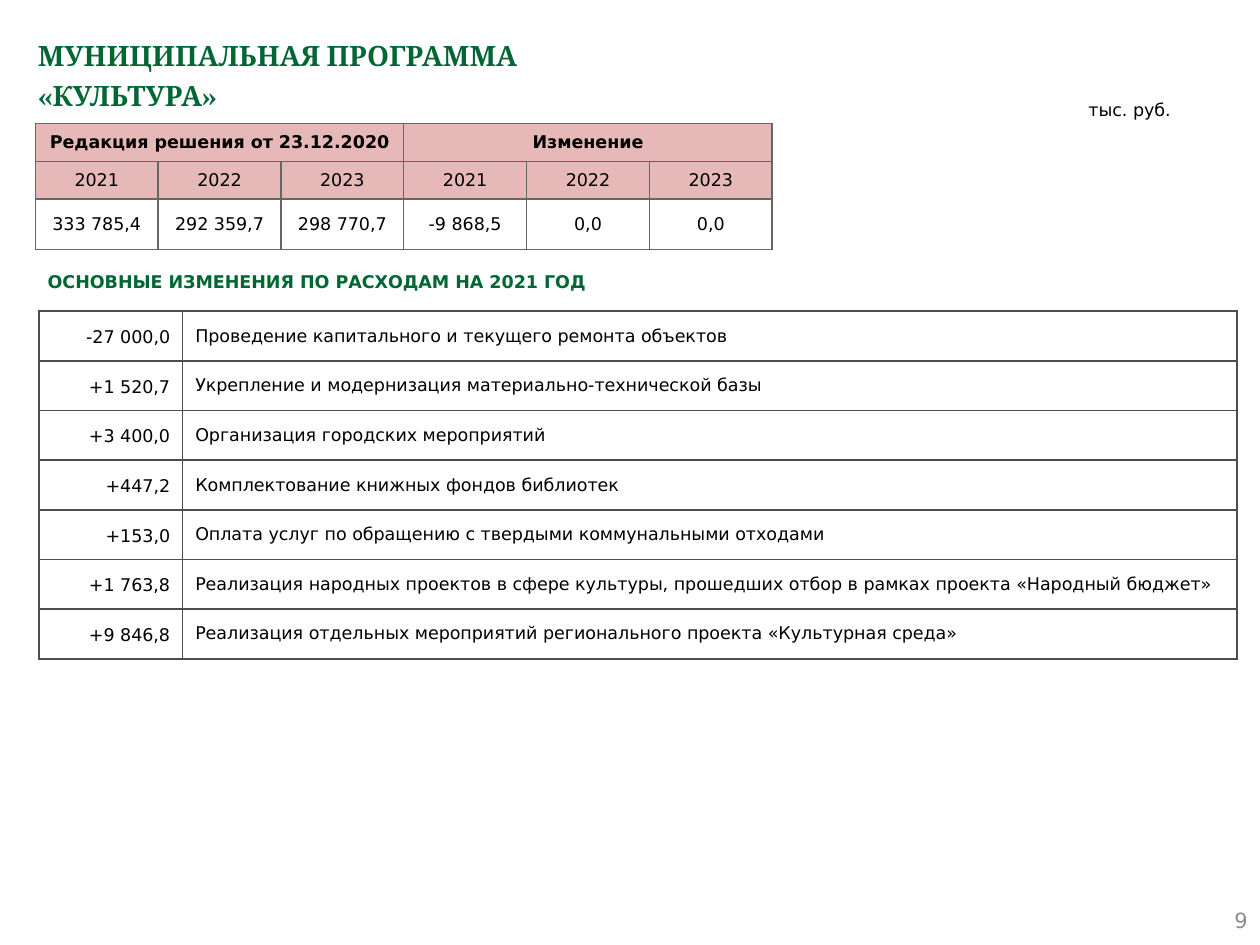
import pptx
import pptx.util
import pptx.dml.color
import pptx.enum.shapes
import pptx.enum.text
import pptx.oxml
import pptx.oxml.ns

Inches, Pt = pptx.util.Inches, pptx.util.Pt
RGB = pptx.dml.color.RGBColor
ALIGN = pptx.enum.text.PP_ALIGN
ANCHOR = pptx.enum.text.MSO_ANCHOR

GREEN = RGB(0x00, 0x66, 0x33)
BLACK = RGB(0x00, 0x00, 0x00)
GREY = RGB(0x8C, 0x8C, 0x8C)
PINK = RGB(0xE6, 0xB9, 0xB8)
CHANGES_LINE = RGB(0x4D, 0x4D, 0x4D)
TOTALS_LINE = RGB(0x66, 0x66, 0x66)

BODY = {"name": "DejaVu Sans", "size": Pt(10), "bold": False}

YEARS = ["2021", "2022", "2023"]
TOTALS = [
    ["Редакция решения от 23.12.2020", "", "", "Изменение", "", ""],
    YEARS * 2,
    ["333 785,4", "292 359,7", "298 770,7", "-9 868,5", "0,0", "0,0"],
]
CHANGES = [
    ["-27 000,0", "Проведение капитального и текущего ремонта объектов"],
    ["+1 520,7", "Укрепление и модернизация материально-технической базы"],
    ["+3 400,0", "Организация городских мероприятий"],
    ["+447,2", "Комплектование книжных фондов библиотек"],
    ["+153,0", "Оплата услуг по обращению с твердыми коммунальными отходами"],
    ["+1 763,8", "Реализация народных проектов в сфере культуры, "
                 "прошедших отбор в рамках проекта «Народный бюджет»"],
    ["+9 846,8", "Реализация отдельных мероприятий регионального проекта "
                 "«Культурная среда»"],
]


def set_attrs(obj, values):
    for name, value in values.items():
        setattr(obj, name, value)


def write(tf, text, color=BLACK, font=None, align=ALIGN.LEFT, spacing=1.0,
          anchor=ANCHOR.TOP):
    """Fill a text frame with one paragraph; a vertical tab breaks the line."""
    set_attrs(tf, {"word_wrap": True, "vertical_anchor": anchor})
    p = tf.paragraphs[0]
    p.text = text
    set_attrs(p, {"alignment": align, "line_spacing": spacing})
    for r in p.runs:
        set_attrs(r.font, {**BODY, **(font or {})})
        r.font.color.rgb = color


def add_title(s, text, box):
    sp = s.shapes.title
    sp.left, sp.top, sp.width, sp.height = map(Inches, box)
    sp.text_frame.auto_size = pptx.enum.text.MSO_AUTO_SIZE.NONE
    write(sp.text_frame, text, GREEN,
          {"name": "Cambria", "size": Pt(16), "bold": True}, spacing=1.2)


def add_text(s, text, box, **fmt):
    sp = s.shapes.add_textbox(*map(Inches, box))
    write(sp.text_frame, text, **fmt)


def add_heading(s, text, box):
    sp = s.shapes.add_shape(pptx.enum.shapes.MSO_SHAPE.PENTAGON,
                            *map(Inches, box))
    sp.adjustments[0] = 0
    sp.shadow.inherit = False
    sp.fill.background()
    sp.line.fill.background()
    write(sp.text_frame, text, GREEN, {"bold": True}, anchor=ANCHOR.MIDDLE)


def set_borders(cell, color):
    tcPr = cell._tc.get_or_add_tcPr()
    for side in ("lnL", "lnR", "lnT", "lnB"):
        tcPr.append(pptx.oxml.parse_xml(
            f'<a:{side} {pptx.oxml.ns.nsdecls("a")} w="{Pt(1)}"><a:solidFill>'
            f'<a:srgbClr val="{color}"/></a:solidFill></a:{side}>'))


def add_table(s, rows, left, top, widths, heights, line, fmt, header_rows=0):
    """Add a bordered grid; fmt(row, col) gives the text format of a cell."""
    frame = s.shapes.add_table(len(rows), len(widths), Inches(left),
                               Inches(top), Inches(sum(widths)),
                               Inches(sum(heights)))
    table = frame.table
    set_attrs(table, {"first_row": False, "horz_banding": False})
    for col, width in zip(table.columns, widths):
        col.width = Inches(width)
    for row, height in zip(table.rows, heights):
        row.height = Inches(height)
    for i, texts in enumerate(rows):
        for j, text in enumerate(texts):
            cell = table.cell(i, j)
            set_borders(cell, line)
            if i < header_rows:
                cell.fill.solid()
                cell.fill.fore_color.rgb = PINK
            else:
                cell.fill.background()
            cell.vertical_anchor = ANCHOR.MIDDLE
            p = cell.text_frame.paragraphs[0]
            p.text = text
            values = fmt(i, j)
            set_attrs(p, values["paragraph"])
            set_attrs(p.font, BODY)
            for r in p.runs:
                set_attrs(r.font, {**BODY, **values.get("font", {})})
                r.font.color.rgb = BLACK
    return table


def totals_format(i, j):
    return {"paragraph": {"alignment": ALIGN.CENTER}, "font": {"bold": i == 0}}


def changes_format(i, j):
    if j == 0:
        return {"paragraph": {"alignment": ALIGN.RIGHT, "line_spacing": 1.15}}
    return {"paragraph": {"alignment": ALIGN.LEFT}}


def add_totals(s):
    table = add_table(s, TOTALS, 0.28, 0.98, [0.975] * 6, [0.3, 0.3, 0.4],
                      TOTALS_LINE, totals_format, header_rows=2)
    margins = ("margin_left", "margin_right", "margin_top", "margin_bottom")
    for cell in table.iter_cells():
        set_attrs(cell, dict.fromkeys(margins, Inches(0.05)))
    # Each group heading covers its three years
    for j in (0, len(YEARS)):
        table.cell(0, j).merge(table.cell(0, j + len(YEARS) - 1))


def main():
    prs = pptx.Presentation()
    prs.slide_width, prs.slide_height = Inches(10), Inches(7.5)
    s = prs.slides.add_slide(prs.slide_layouts[5])

    # Title and page number
    add_title(s, "МУНИЦИПАЛЬНАЯ ПРОГРАММА \v«КУЛЬТУРА»",
              (0.2, 0.2, 9.61, 0.79))
    add_text(s, "9", (7.67, 7.1, 2.33, 0.4), color=GREY,
             font={"size": Pt(12)}, align=ALIGN.RIGHT, anchor=ANCHOR.MIDDLE)

    # Changes in spending
    add_heading(s, "ОСНОВНЫЕ ИЗМЕНЕНИЯ ПО РАСХОДАМ НА 2021 ГОД",
                (0.28, 2.02, 4.92, 0.43))
    add_table(s, CHANGES, 0.31, 2.47, [1.14, 8.37],
              [2.76 / len(CHANGES)] * len(CHANGES), CHANGES_LINE,
              changes_format)

    # Programme totals and their unit
    add_text(s, "тыс. руб.", (8.54, 0.7, 1.01, 0.3), spacing=1.2)
    add_totals(s)

    prs.save("out.pptx")


if __name__ == "__main__":
    main()
